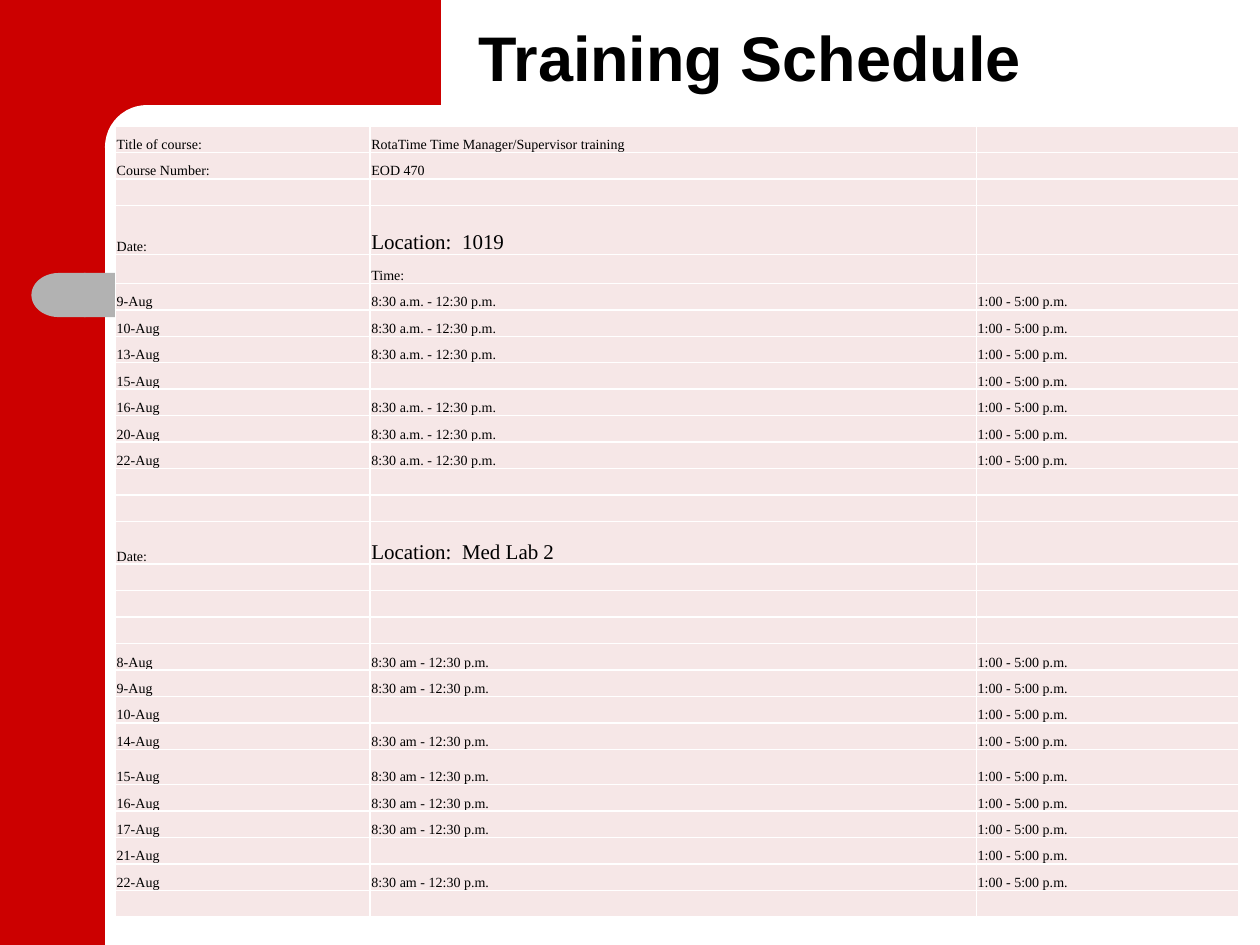
from dataclasses import dataclass

from lxml import etree
from pptx import Presentation
from pptx import util as u
from pptx.dml.color import RGBColor
from pptx.enum import shapes, text
from pptx.oxml import ns


@dataclass(frozen=True)
class Theme:
    red: str = "CC0000"
    grey: str = "B2B2B2"
    white: str = "FFFFFF"
    ink: str = "000000"
    cell: str = "F6E7E7"
    title_font: str = "Arial"
    body_font: str = "Times New Roman"
    title_size: int = 36
    location_size: int = 12
    body_size: int = 8
    border: float = 1


THEME = Theme()
SLIDE_COLUMNS, SLIDE_ROWS = 120, 90
UNIT = u.Inches(10) / SLIDE_COLUMNS

COLUMN_WIDTHS = (24.25, 57.75, 25)
ROW_HEIGHT = 2.52
TALL_ROWS = {3: 4.68, 4: 2.76, 14: 4.08, 22: 3.36}

EMPTY = ("", "", "")
AFTERNOON = "1:00 - 5:00 p.m."


def grid(*lengths):
    return [u.Emu(round(length * UNIT)) for length in lengths]


def sessions(days, morning, afternoon_only):
    """One row a day; some days have no morning session."""
    return [(f"{day}-Aug", "" if day in afternoon_only else morning, AFTERNOON)
            for day in days]


def schedule_rows():
    return [
        ("Title of course:", "RotaTime Time Manager/Supervisor training", ""),
        ("Course Number:", "EOD 470", ""),
        EMPTY,
        ("Date:", "Location:  1019", ""),
        ("", "Time:", ""),
        *sessions((9, 10, 13, 15, 16, 20, 22), "8:30 a.m. - 12:30 p.m.", {15}),
        EMPTY, EMPTY,
        ("Date:", "Location:  Med Lab 2", ""),
        EMPTY, EMPTY, EMPTY,
        *sessions((8, 9, 10, 14, 15, 16, 17, 21, 22),
                  "8:30 am - 12:30 p.m.", {10, 21}),
        EMPTY,
    ]


def style_runs(paragraph, font, size, bold=False):
    for run in paragraph.runs:
        run.font.name = font
        run.font.size = u.Pt(size)
        run.font.bold = bold
        run.font.color.rgb = RGBColor.from_string(THEME.ink)


def add_block(slide, kind, box, colour, rounding=None):
    block = slide.shapes.add_shape(kind, *grid(*box))
    block.shadow.inherit = False
    block.fill.solid()
    block.fill.fore_color.rgb = RGBColor.from_string(colour)
    block.line.fill.background()
    if rounding is not None:
        block.adjustments[0] = rounding
    return block


def add_frame(slide):
    kinds = shapes.MSO_SHAPE
    add_block(slide, kinds.RECTANGLE, (0, 0, 10, SLIDE_ROWS), THEME.red)
    add_block(slide, kinds.RECTANGLE, (9, 0, 33, 14), THEME.red)
    add_block(slide, kinds.ROUNDED_RECTANGLE, (10, 10, 67, 8), THEME.white, 0.5)
    add_block(slide, kinds.ROUNDED_RECTANGLE, (8, 26, 92, 4.2), THEME.grey, 0)
    bar_end = add_block(slide, kinds.FLOWCHART_DELAY, (3, 26, 5.16, 4.2), THEME.grey)
    bar_end._element.spPr.get_or_add_xfrm().set("flipH", "1")


def add_borders(cell):
    properties = cell._tc.get_or_add_tcPr()
    for side in ("lnL", "lnR", "lnT", "lnB"):
        line = etree.SubElement(properties, ns.qn(f"a:{side}"),
                                w=str(u.Pt(THEME.border)))
        fill = etree.SubElement(line, ns.qn("a:solidFill"))
        etree.SubElement(fill, ns.qn("a:srgbClr"), val=THEME.white)


def fill_cell(cell, wording):
    add_borders(cell)
    cell.fill.solid()
    cell.fill.fore_color.rgb = RGBColor.from_string(THEME.cell)
    cell.margin_left = cell.margin_right = cell.margin_top = u.Inches(0.01)
    cell.margin_bottom = 0
    cell.vertical_anchor = text.MSO_ANCHOR.BOTTOM
    cell.text_frame.text = wording
    paragraph = cell.text_frame.paragraphs[0]
    is_location = wording.startswith("Location")
    style_runs(paragraph, THEME.body_font,
               THEME.location_size if is_location else THEME.body_size)
    if not wording:
        # Keeps empty rows from growing to the default text size
        paragraph._p.get_or_add_endParaRPr().set("sz", str(THEME.body_size * 100))


def add_schedule(slide):
    rows = schedule_rows()
    heights = [TALL_ROWS.get(index, ROW_HEIGHT) for index in range(len(rows))]
    box = grid(11, 12, sum(COLUMN_WIDTHS), sum(heights))
    schedule = slide.shapes.add_table(len(rows), len(COLUMN_WIDTHS), *box).table
    schedule.first_row = schedule.horz_banding = False
    for column, width in zip(schedule.columns, grid(*COLUMN_WIDTHS)):
        column.width = width
    for row, height, wordings in zip(schedule.rows, grid(*heights), rows):
        row.height = height
        for cell, wording in zip(row.cells, wordings):
            fill_cell(cell, wording)


def add_title(slide):
    frame = slide.shapes.add_textbox(*grid(44.4, 2, 105, 15)).text_frame
    frame.word_wrap = True
    frame.text = "Training Schedule"
    heading = frame.paragraphs[0]
    heading.line_spacing = 0.9
    style_runs(heading, THEME.title_font, THEME.title_size, bold=True)


def main():
    deck = Presentation()
    deck.slide_width, deck.slide_height = grid(SLIDE_COLUMNS, SLIDE_ROWS)
    slide = deck.slides.add_slide(deck.slide_layouts[6])
    add_frame(slide)
    add_schedule(slide)
    add_title(slide)
    deck.save("out.pptx")


if __name__ == "__main__":
    main()
